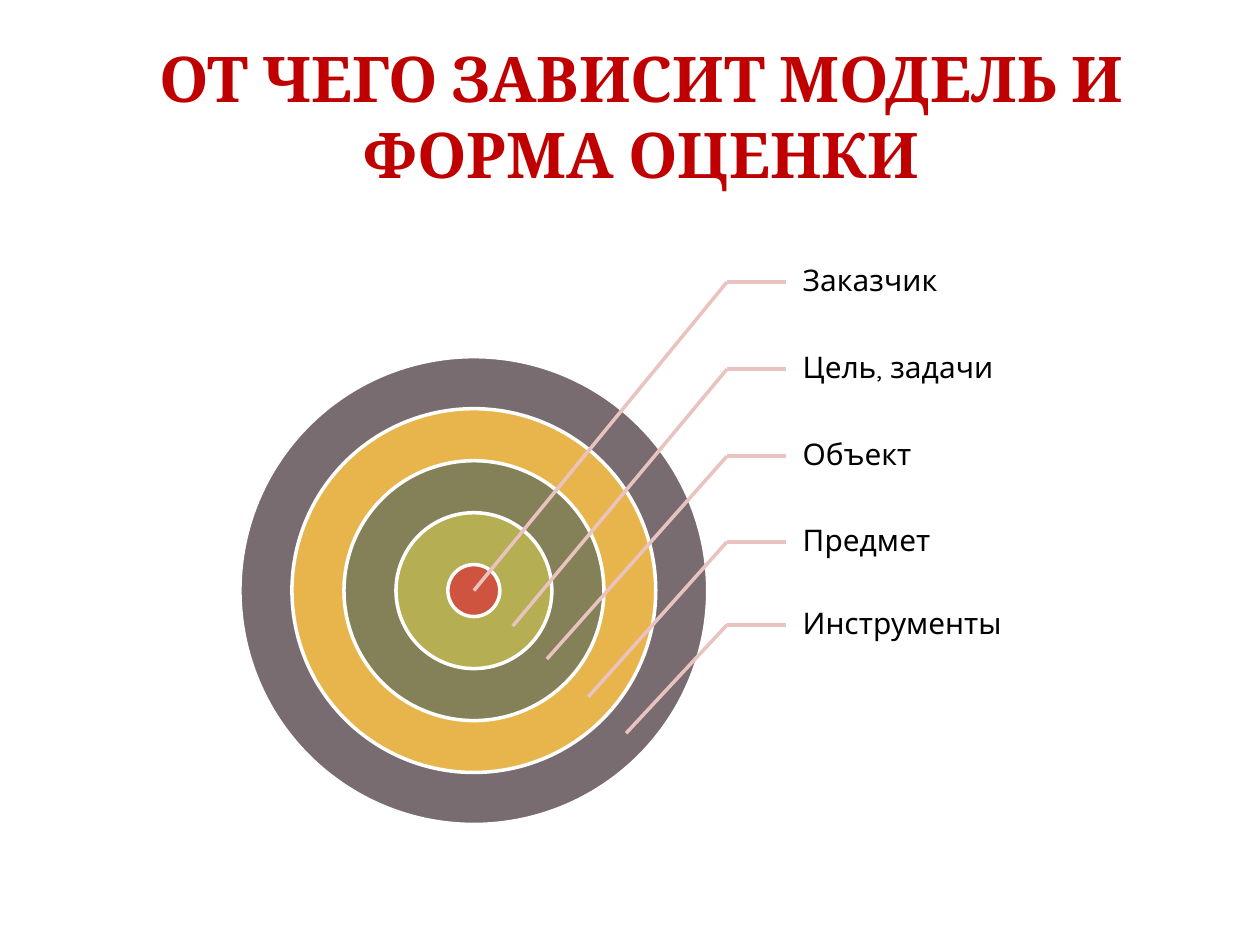
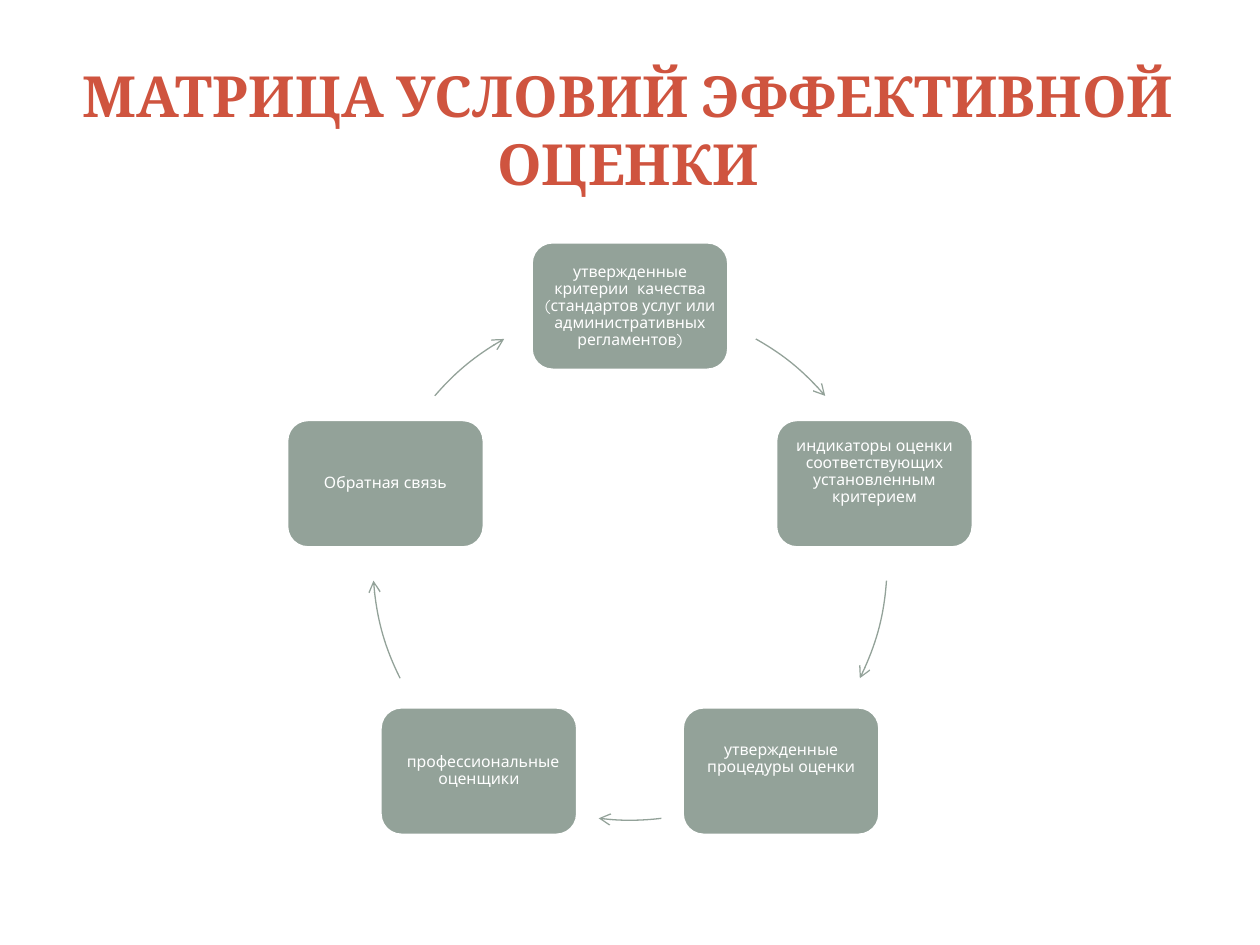
from math import cos, radians, sin

from lxml.etree import SubElement
from pptx import Presentation
from pptx.dml.color import RGBColor
from pptx.enum.shapes import MSO_CONNECTOR as Link, MSO_SHAPE as Shape
from pptx.enum.text import MSO_ANCHOR as Anchor, PP_ALIGN as Align
from pptx.oxml.ns import qn
from pptx.util import Pt

COLORS = {
    "white": "FFFFFF", "black": "000000", "crimson": "C00000",
    "red": "CF543F", "lime": "B5AE53", "olive": "848058",
    "amber": "E8B54D", "mauve": "786C71", "pink": "E9C3C0", "sage": "93A299",
}


class Deck:
    title_font, body_font = "Cambria", "Quicksand"

    def __init__(self):
        self.prs = Presentation()
        self.prs.slide_width, self.prs.slide_height = Pt(720), Pt(540)
        self.slide = None

    def color(self, name):
        return RGBColor.from_string(COLORS[name])

    def new_slide(self):
        self.slide = self.prs.slides.add_slide(self.prs.slide_layouts[6])

    def set_text(self, holder, text, font, size, color, align=Align.CENTER,
                 margins=(7.2, 3.6, 7.2, 3.6), spacing=1.0, bold=False, indent=0):
        frame = holder.text_frame
        frame.word_wrap = True
        frame.vertical_anchor = Anchor.MIDDLE
        (frame.margin_left, frame.margin_top,
         frame.margin_right, frame.margin_bottom) = map(Pt, margins)
        line = frame.paragraphs[0]
        line.text = text
        line.alignment, line.line_spacing = align, spacing
        line.font.name, line.font.size, line.font.bold = font, Pt(size), bold
        line.font.color.rgb = self.color(color)
        if indent:
            line._p.get_or_add_pPr().set("indent", str(Pt(indent)))

    def text_box(self, box, text, *style, **options):
        holder = self.slide.shapes.add_textbox(*map(Pt, box))
        self.set_text(holder, text, *style, **options)
        return holder

    def title(self, box, text, size, color):
        self.text_box(box, text, self.title_font, size, color, bold=True)

    def shape(self, kind, center, size, fill, line="white", weight=2):
        (x, y), (w, h) = center, size
        item = self.slide.shapes.add_shape(
            kind, Pt(x - w / 2), Pt(y - h / 2), Pt(w), Pt(h))
        item.shadow.inherit = False
        if fill:
            item.fill.solid()
            item.fill.fore_color.rgb = self.color(fill)
        else:
            item.fill.background()
        item.line.color.rgb = self.color(line)
        item.line.width = Pt(weight)
        return item

    def line(self, start, end, color):
        link = self.slide.shapes.add_connector(
            Link.STRAIGHT, *map(Pt, (*start, *end)))
        link.line.color.rgb = self.color(color)
        link.line.width = Pt(2)
        SubElement(link._element.spPr, qn("a:effectLst"))
        return link

    def arc_arrow(self, center, radius, start, end, color):
        arc = self.shape(Shape.ARC, center, (2 * radius, 2 * radius), None, color, 0.75)
        # Angles are stored in 60000ths of a degree
        for i, angle in enumerate((start, end)):
            arc.adjustments[i] = angle % 360 * 0.6
        SubElement(arc._element.spPr.find(qn("a:ln")), qn("a:tailEnd"), type="arrow")


def target_slide(deck):
    deck.new_slide()
    deck.title((42.5, 20.9, 648, 90), "ОТ ЧЕГО ЗАВИСИТ МОДЕЛЬ И ФОРМА ОЦЕНКИ", 36, "crimson")

    # Rings, from the outer one inwards
    core = 29.7
    for i, fill in enumerate(("mauve", "amber", "olive", "lime", "red")):
        diameter = core * (9 - 2 * i)
        deck.shape(Shape.OVAL, (270.8, 337.5), (diameter, diameter), fill)

    # Labels with leader lines: text, label middle, point on the ring
    bend_x, label_x, label_h = 415.4, 449.3, 47.5
    leaders = (
        ("Заказчик", 161.2, (270.8, 337.5)),
        ("Цель, задачи", 211, (293, 357.8)),
        ("Объект", 260.7, (312.5, 376.6)),
        ("Предмет", 309.6, (336.2, 398.2)),
        ("Инструменты", 357.1, (357.8, 419)),
    )
    for text, y, tip in leaders:
        label = deck.text_box(
            (label_x, y - label_h / 2, 134, label_h), text, deck.body_font, 17, "black",
            align=Align.LEFT, margins=(9.4, 1.4, 1.4, 1.4), spacing=0.9)
        deck.line((bend_x, y), (label_x, y), "pink").end_connect(label, 1)
        deck.line((bend_x, y), tip, "pink")


def cycle_slide(deck):
    deck.new_slide()
    deck.title((33.8, 32.4, 650, 82), "МАТРИЦА УСЛОВИЙ ЭФФЕКТИВНОЙ ОЦЕНКИ", 32.4, "red")

    # Conditions clockwise from the top: text, bottom margin, first-line
    # indent, start and end angle of the arrow that follows
    center, radius, pad = (360, 321.8), 146.9, 2.9
    raised = pad + 13.8
    conditions = (
        ("утвержденные критерии  качества (стандартов услуг или административных регламентов)",
         pad, 0, -60.7, -40.6),
        ("индикаторы оценки соответствующих установленным критерием", raised, 0, 3.9, 26.6),
        ("утвержденные процедуры оценки", raised, 0, 83, 97),
        ("профессиональные оценщики", pad, 4.7, 153.4, 176.1),
        ("Обратная связь", pad, 0, 220.6, 240.7),
    )
    for i, (text, bottom, indent, start, end) in enumerate(conditions):
        angle = radians(360 / len(conditions) * i - 90)
        spot = (center[0] + radius * cos(angle), center[1] + radius * sin(angle))
        condition = deck.shape(Shape.ROUNDED_RECTANGLE, spot, (113, 73.4), "sage")
        deck.set_text(condition, text, deck.body_font, 9, "white",
                      margins=(pad, pad, pad, bottom), spacing=0.9, indent=indent)
        deck.arc_arrow(center, radius, start, end, "sage")


def main():
    deck = Deck()
    target_slide(deck)
    cycle_slide(deck)
    deck.prs.save("out.pptx")


if __name__ == "__main__":
    main()
